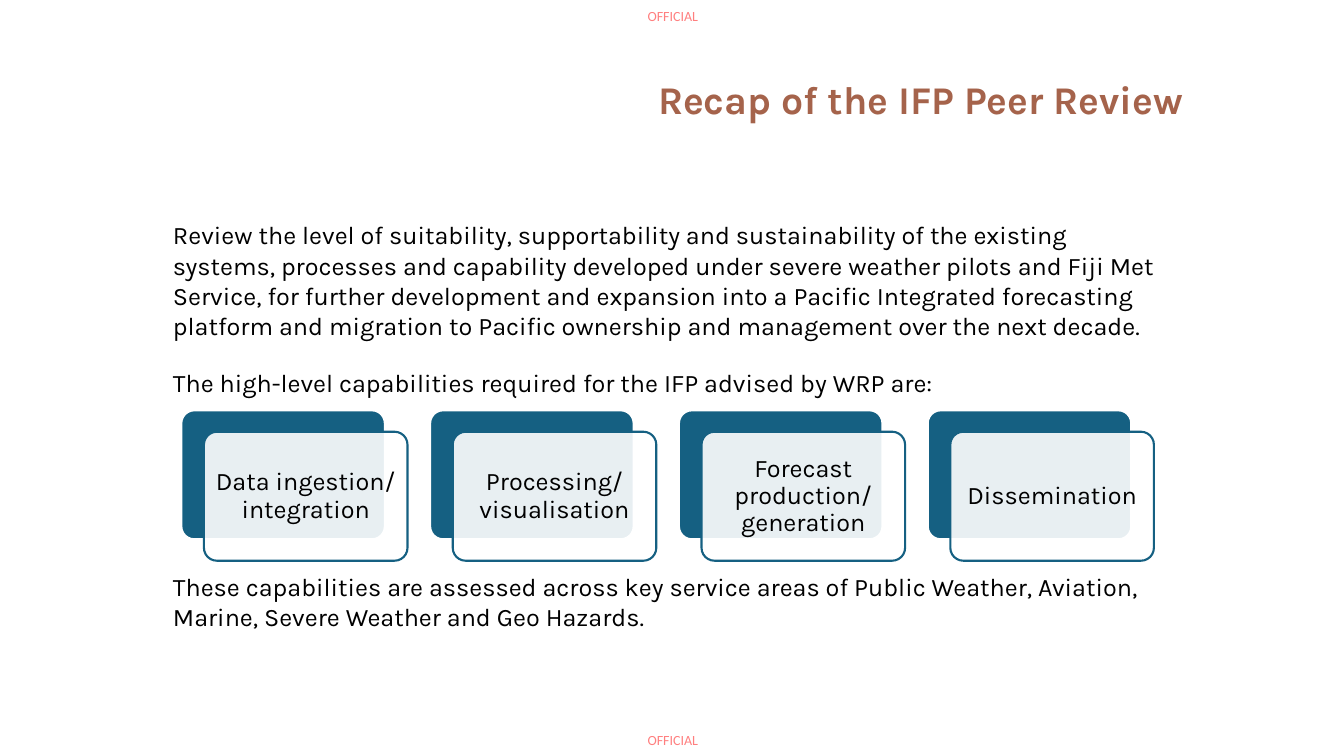
from dataclasses import dataclass

import pptx
import pptx.dml.color
import pptx.enum.shapes
import pptx.enum.text
import pptx.oxml
import pptx.oxml.ns
import pptx.util

Cm = pptx.util.Cm
Pt = pptx.util.Pt
ALIGN = pptx.enum.text.PP_ALIGN
ANCHOR = pptx.enum.text.MSO_ANCHOR


@dataclass(frozen=True)
class Theme:
    text_font: str = "Karla"
    marking_font: str = "Calibri"
    title_size: int = 28
    text_size: int = 18
    marking_size: int = 10
    title: str = "A5634B"
    text: str = "000000"
    marking: str = "FF0000"
    accent: str = "156082"
    paper: str = "FFFFFF"


THEME = Theme()

PURPOSE = (
    "Review the level of suitability, supportability and sustainability of the "
    "existing systems, processes and capability developed under severe weather "
    "pilots and Fiji Met Service, for further development and expansion into a "
    "Pacific Integrated forecasting platform and migration to Pacific ownership "
    "and management over the next decade."
)
CAPABILITIES_INTRO = "The high-level capabilities required for the IFP advised by WRP are:"
SERVICE_AREAS = (
    "These capabilities are assessed across key service areas of Public Weather, "
    "Aviation, Marine, Severe Weather and Geo Hazards."
)
CAPABILITIES = [
    "Data ingestion/ integration",
    "Processing/ visualisation",
    "Forecast production/ generation",
    "Dissemination",
]

CARD_LEFT, CARD_TOP = 4.57, 10.34
CARD_WIDTH, CARD_HEIGHT = 5.13, 3.25
CARD_PITCH = 6.27
FRONT_SHIFT_X, FRONT_SHIFT_Y = 0.57, 0.54


def rgb(code):
    return pptx.dml.color.RGBColor.from_string(code)


def set_opacity(fill, percent):
    """Make a solid fill partly transparent."""
    color = fill._xPr.find(".//" + pptx.oxml.ns.qn("a:srgbClr"))
    alpha = pptx.oxml.parse_xml(
        f'<a:alpha {pptx.oxml.ns.nsdecls("a")} val="{percent * 1000}"/>'
    )
    color.append(alpha)


def set_insets(frame, inset):
    frame.margin_left = frame.margin_right = Cm(inset)
    frame.margin_top = frame.margin_bottom = Cm(inset)


def write(frame, text, size=THEME.text_size, color=THEME.text,
          font=THEME.text_font, bold=False, align=ALIGN.LEFT, spacing=None):
    """Fill a text frame with one paragraph and return that paragraph."""
    frame.word_wrap = True
    paragraph = frame.paragraphs[0]
    paragraph.text = text
    paragraph.alignment = align
    paragraph.line_spacing = spacing
    paragraph.font.name = font
    paragraph.font.size = Pt(size)
    paragraph.font.bold = bold
    paragraph.font.color.rgb = rgb(color)
    return paragraph


def add_title(slide, text):
    title = slide.shapes.title
    title.left, title.top = Cm(16.33), Cm(0.97)
    title.width, title.height = Cm(16.38), Cm(3.18)
    title.text_frame.vertical_anchor = ANCHOR.MIDDLE
    write(title.text_frame, text, THEME.title_size, THEME.title,
          bold=True, spacing=0.9)


def add_text(slide, text, top, width, height, spacing=None):
    box = slide.shapes.add_textbox(Cm(4.11), Cm(top), Cm(width), Cm(height))
    write(box.text_frame, text, spacing=spacing)


def add_marking(slide, top):
    """Add the faded security marking at the page edge."""
    box = slide.shapes.add_textbox(Cm(16.28), Cm(top), Cm(1.35), Cm(0.43))
    set_insets(box.text_frame, 0)
    paragraph = write(box.text_frame, "OFFICIAL", THEME.marking_size,
                      THEME.marking, THEME.marking_font, align=ALIGN.CENTER)
    box.text_frame.word_wrap = False
    set_opacity(paragraph.font.fill, 50)


def add_card(slide, left, top, fill, line):
    card = slide.shapes.add_shape(
        pptx.enum.shapes.MSO_SHAPE.ROUNDED_RECTANGLE,
        Cm(left), Cm(top), Cm(CARD_WIDTH), Cm(CARD_HEIGHT),
    )
    card.adjustments[0] = 0.1
    card.shadow.inherit = False
    card.fill.solid()
    card.fill.fore_color.rgb = rgb(fill)
    card.line.color.rgb = rgb(line)
    card.line.width = Pt(1.5)
    return card


def add_capability(slide, name, left):
    """Add a solid card with a translucent, labelled card over it."""
    add_card(slide, left, CARD_TOP, THEME.accent, THEME.paper)
    front = add_card(slide, left + FRONT_SHIFT_X, CARD_TOP + FRONT_SHIFT_Y,
                     THEME.paper, THEME.accent)
    set_opacity(front.fill, 90)
    set_insets(front.text_frame, 0.18)
    front.text_frame.vertical_anchor = ANCHOR.MIDDLE
    write(front.text_frame, name, align=ALIGN.CENTER, spacing=0.9)


def main():
    deck = pptx.Presentation()
    deck.slide_width, deck.slide_height = Cm(33.87), Cm(19.05)
    slide = deck.slides.add_slide(deck.slide_layouts.get_by_name("Title Only"))

    for top in (0.18, 18.44):
        add_marking(slide, top)
    add_title(slide, "Recap of the IFP Peer Review")
    add_text(slide, PURPOSE, 5.41, 25.65, 3.33)
    add_text(slide, CAPABILITIES_INTRO, 9.35, 25.2, 0.86, spacing=Pt(15.6))
    for column, name in enumerate(CAPABILITIES):
        add_capability(slide, name, CARD_LEFT + column * CARD_PITCH)
    add_text(slide, SERVICE_AREAS, 14.27, 26.09, 1.8)

    deck.save("out.pptx")


if __name__ == "__main__":
    main()
